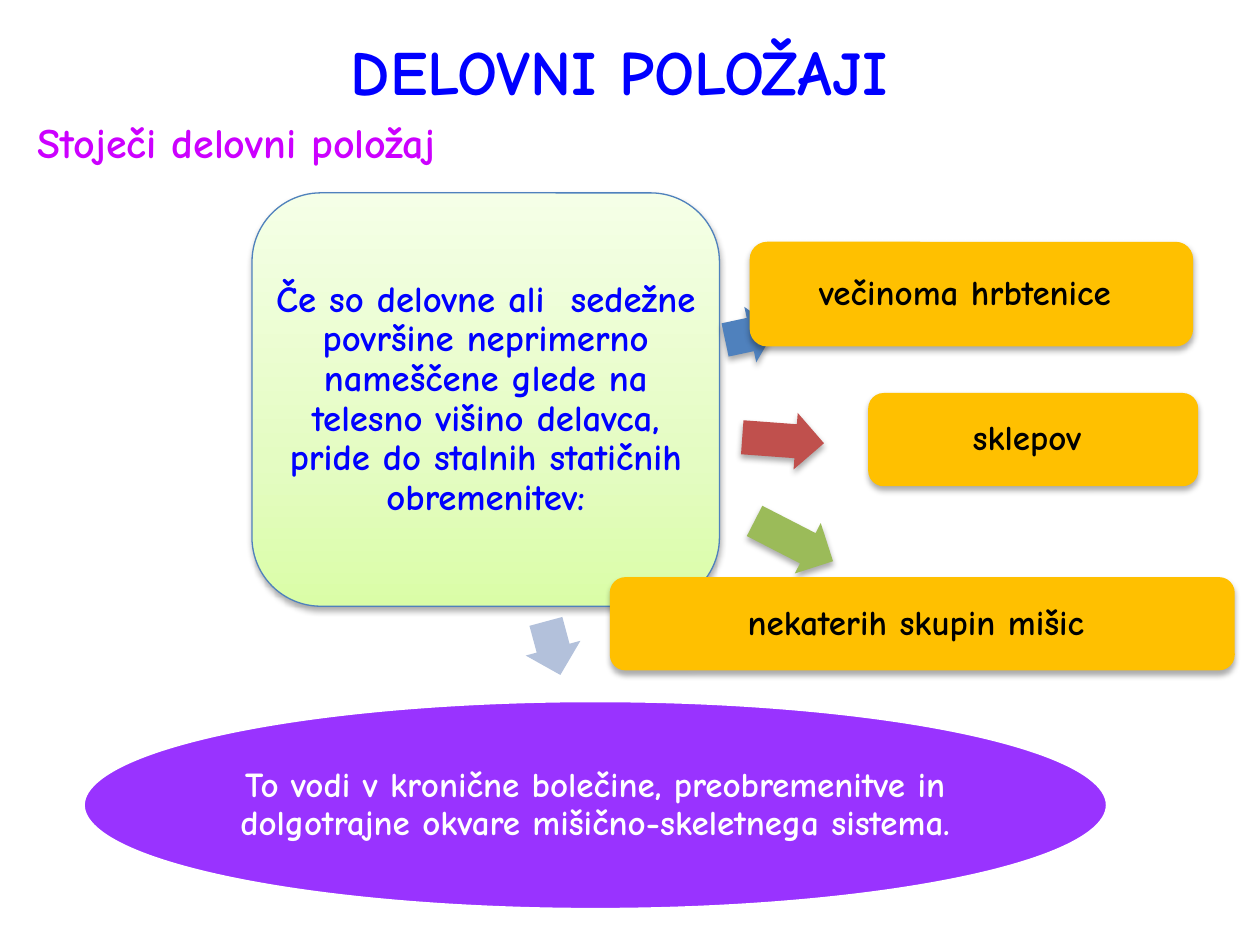
import pptx
import pptx.dml.color
import pptx.enum.shapes
import pptx.enum.text
import pptx.oxml
import pptx.oxml.ns
import pptx.util

Pt = pptx.util.Pt
Kind = pptx.enum.shapes.MSO_SHAPE
Align = pptx.enum.text.PP_ALIGN
Anchor = pptx.enum.text.MSO_ANCHOR
qn = pptx.oxml.ns.qn
NS = pptx.oxml.ns.nsdecls("a")

FONT = "Comic Neue"
BLUE = "0000FF"

# text, size, colour, bold, alignment
HEADS = [
    ("DELOVNI POLOŽAJI ", 36, BLUE, Align.CENTER),
    ("Stoječi delovni položaj", 24, "CC00FF", Align.LEFT),
]
CAUSE = ("Če so delovne ali  sedežne površine neprimerno nameščene glede na "
         "telesno višino delavca, pride do stalnih statičnih obremenitev:")
CAUSE_AT = (144, 110.2, 267.1, 236.2)
STOPS = [(0, "DAFDA7"), (35, "E4FCC2"), (100, "F5FFE7")]

# arrow place, turn and colour; box text and place
LOADS = [
    ((414, 175, 29.5, 32.4), 347.9, "4F81BD",
     "večinoma hrbtenice ", (428.4, 138.2, 253.4, 59.8)),
    ((424.1, 235.4, 46.8, 32.4), 4.2, "C0504D",
     "sklepov ", (496.1, 224.6, 188.6, 53.3)),
    ((428.4, 293, 50.4, 32.4), 27.2, "9BBB59",
     "nekaterih skupin mišic ", (348.5, 329.8, 357.1, 53.3)),
]
DOWN = ((300.2, 354.2, 31.7, 32.4), 74.9, "B3C1DB")
RESULT = ("To vodi v kronične bolečine, preobremenitve in "
          "dolgotrajne okvare mišično-skeletnega sistema.")
RESULT_AT = (47.5, 400.3, 585.4, 119.5)


def rgb(code):
    return pptx.dml.color.RGBColor.from_string(code)


def write(para, text, size, color):
    run = para.add_run()
    run.text = text
    run.font.name, run.font.size, run.font.bold = FONT, Pt(size), True
    run.font.color.rgb = rgb(color)


def draw(kind, place, color=None, shade=True):
    """Add a preset shape without outline, with a soft shadow below if asked."""
    shape = slide.shapes.add_shape(kind, *map(Pt, place))
    shape.shadow.inherit = False
    shape.line.fill.background()
    if color:
        shape.fill.solid()
        shape.fill.fore_color.rgb = rgb(color)
    if shade:
        shape._element.spPr.find(qn("a:effectLst")).append(pptx.oxml.parse_xml(
            f'<a:outerShdw {NS} blurRad="{Pt(3.5)}" dist="{Pt(2.2)}" '
            'dir="5400000" rotWithShape="0"><a:srgbClr val="000000">'
            '<a:alpha val="32000"/></a:srgbClr></a:outerShdw>'))
    return shape


def label(shape, text, size, color):
    frame = shape.text_frame
    frame.word_wrap = True
    frame.vertical_anchor = Anchor.MIDDLE
    frame.margin_left = frame.margin_right = Pt(2)
    frame.margin_top = frame.margin_bottom = Pt(2)
    para = frame.paragraphs[0]
    para.alignment, para.line_spacing = Align.CENTER, 0.9
    write(para, text, size, color)


def edge(shape, color, width):
    shape.line.color.rgb = rgb(color)
    shape.line.width = Pt(width)


def blend(shape, stops):
    """Fill from bottom to top through the given stops."""
    shape.fill.gradient()
    shape.fill.gradient_angle = 90
    group = shape._element.spPr.find(qn("a:gradFill")).find(qn("a:gsLst"))
    for old in list(group):
        group.remove(old)
    for pos, color in stops:
        group.append(pptx.oxml.parse_xml(
            f'<a:gs {NS} pos="{pos * 1000}"><a:srgbClr val="{color}"/></a:gs>'))


def arrow(place, turn, color, shade=True):
    shape = draw(Kind.RIGHT_ARROW, place, color, shade)
    shape.adjustments[0], shape.adjustments[1] = 0.6, 0.5
    shape.rotation = turn


deck = pptx.Presentation()
deck.slide_width, deck.slide_height = Pt(720), Pt(540)
slide = deck.slides.add_slide(deck.slide_layouts[6])

head = slide.shapes.add_textbox(Pt(14.4), Pt(15.1), Pt(691.9), Pt(90)).text_frame
head.word_wrap = True
for num, (text, size, color, align) in enumerate(HEADS):
    para = head.add_paragraph() if num else head.paragraphs[0]
    para.alignment = align
    para.space_before = Pt(size * 0.2)
    props = para._p.get_or_add_pPr()
    props.set("marL", str(Pt(48)))
    props.set("indent", str(Pt(-48)))
    write(para, text, size, color)

cause = draw(Kind.ROUNDED_RECTANGLE, CAUSE_AT)
blend(cause, STOPS)
edge(cause, "4F81BD", 0.75)
label(cause, CAUSE, 21, BLUE)

for spot, turn, color, text, place in LOADS:
    arrow(spot, turn, color)
    label(draw(Kind.ROUNDED_RECTANGLE, place, "FFC000"), text, 20, "000000")

arrow(*DOWN, shade=False)
result = draw(Kind.OVAL, RESULT_AT, "9933FF", shade=False)
edge(result, "FFFFFF", 2)
label(result, RESULT, 20, "FFFFFF")

deck.save("out.pptx")
